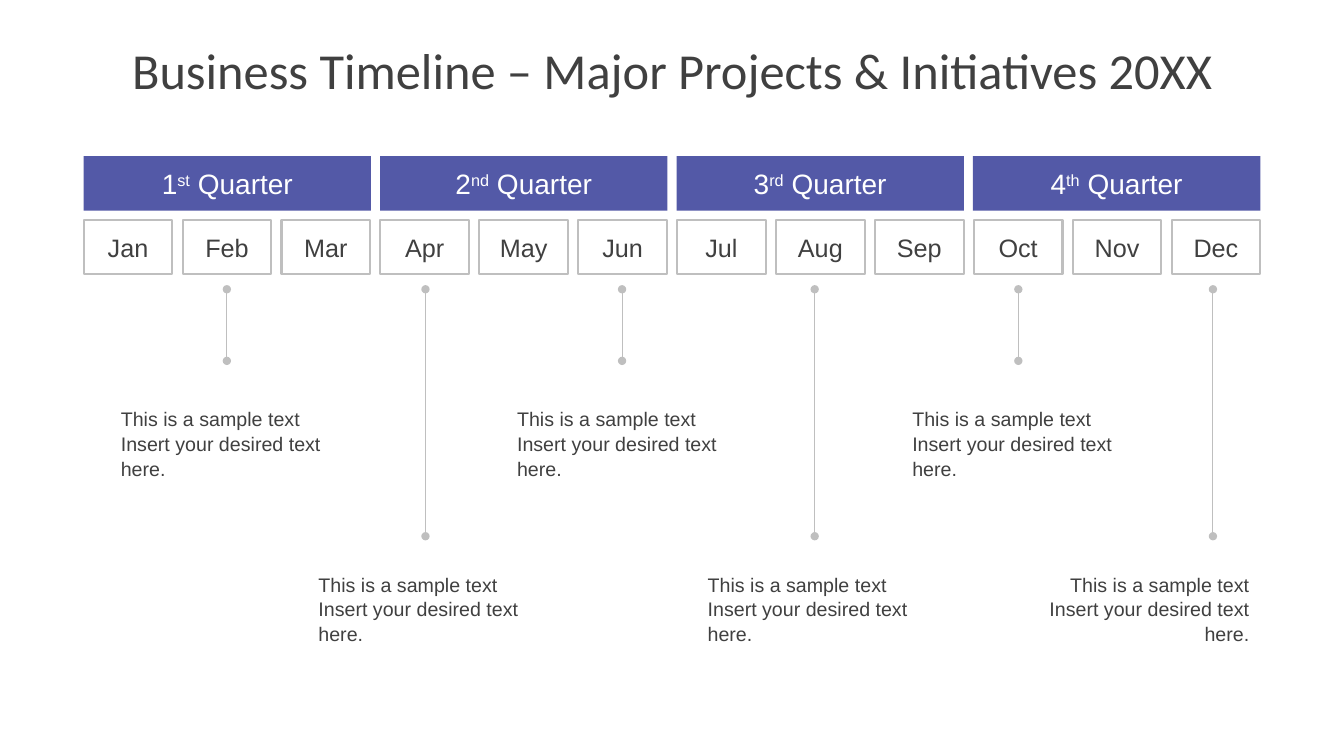
"""Build a one-slide business timeline with quarters, months and project notes."""
from lxml import etree
from pptx import Presentation
from pptx.dml.color import RGBColor
from pptx.enum.shapes import MSO_CONNECTOR, MSO_SHAPE
from pptx.enum.text import MSO_ANCHOR, MSO_AUTO_SIZE, PP_ALIGN
from pptx.oxml.ns import qn
from pptx.util import Inches, Pt

RECT = MSO_SHAPE.RECTANGLE
LINE = MSO_CONNECTOR.STRAIGHT
MIDDLE = MSO_ANCHOR.MIDDLE
GROW = MSO_AUTO_SIZE.SHAPE_TO_FIT_TEXT
LEFT, CENTER, RIGHT = PP_ALIGN.LEFT, PP_ALIGN.CENTER, PP_ALIGN.RIGHT

THEME = {
    "ink": RGBColor(0x40, 0x40, 0x40),
    "white": RGBColor(0xFF, 0xFF, 0xFF),
    "bar": RGBColor(0x53, 0x59, 0xA7),
    "rule": RGBColor(0xBF, 0xBF, 0xBF),
    "title": 36, "quarter": 20, "month": 18, "note": 14,
    "head": "Calibri", "body": "Arial",
}


def add_run(para, text, size, color="ink", font="body"):
    run = para.add_run()
    run.text = text
    run.font.size = Pt(THEME[size])
    run.font.name = THEME[font]
    run.font.color.rgb = THEME[color]
    return run


def add_box(left, top, width):
    box = slide.shapes.add_shape(
        RECT, Inches(left), Inches(top), Inches(width), Inches(0.54))
    box.shadow.inherit = False
    box.text_frame.vertical_anchor = MIDDLE
    box.text_frame.paragraphs[0].alignment = CENTER
    return box


deck = Presentation()
deck.slide_width, deck.slide_height = Inches(13.33), Inches(7.5)
slide = deck.slides.add_slide(deck.slide_layouts[5])

title = slide.shapes.title
title.left, title.top = Inches(0.67), Inches(0.3)
title.width, title.height = Inches(12), Inches(0.78)
frame = title.text_frame
frame.vertical_anchor = MIDDLE
frame.margin_left = frame.margin_right = 0
frame.margin_top = frame.margin_bottom = Inches(0.07)
frame.paragraphs[0].alignment = CENTER
add_run(frame.paragraphs[0], "Business Timeline – Major Projects & Initiatives 20XX",
        "title", font="head")

START, END = 0.83, 12.5
for i, suffix in enumerate(["st", "nd", "rd", "th"]):
    bar = add_box(START + i * 2.94, 1.55, 2.85)
    bar.fill.solid()
    bar.fill.fore_color.rgb = THEME["bar"]
    bar.line.fill.background()
    para = bar.text_frame.paragraphs[0]
    add_run(para, str(i + 1), "quarter", "white")
    mark = add_run(para, suffix, "quarter", "white")
    mark.font._element.set("baseline", "30000")
    add_run(para, " Quarter", "quarter", "white")

months = "Jan Feb Mar Apr May Jun Jul Aug Sep Oct Nov Dec".split()
WIDTH = 0.88
step = (END - START - WIDTH) / (len(months) - 1)
for i, month in enumerate(months):
    cell = add_box(START + i * step, 2.18, WIDTH)
    cell.fill.background()
    cell.line.color.rgb = THEME["rule"]
    cell.line.width = Pt(1.5)
    para = cell.text_frame.paragraphs[0]
    add_run(para, month, "month")

SHORT = (3.58, 3.98, 2.28)
LONG = (5.32, 5.62, 2.31)
notes = [
    (2.25, 1.1, SHORT, LEFT), (4.22, 3.06, LONG, LEFT),
    (6.17, 5.03, SHORT, LEFT), (8.08, 6.92, LONG, LEFT),
    (10.1, 8.95, SHORT, LEFT), (12.03, 10.18, LONG, RIGHT),
]
for x, left, (end, top, width), align in notes:
    stem = slide.shapes.add_connector(
        LINE, Inches(x), Inches(2.87), Inches(x), Inches(end))
    stem.line.color.rgb = THEME["rule"]
    stem.line.width = Pt(0.75)
    pen = stem.line._get_or_add_ln()
    for tip in ("a:headEnd", "a:tailEnd"):
        etree.SubElement(pen, qn(tip), type="oval")
    etree.SubElement(stem._element.spPr, qn("a:effectLst"))

    note = slide.shapes.add_textbox(
        Inches(left), Inches(top), Inches(width), Inches(0.81))
    note.text_frame.word_wrap = True
    note.text_frame.auto_size = GROW
    para = note.text_frame.paragraphs[0]
    para.alignment = align
    para.line_spacing = 1.05
    add_run(para, "This is a sample text Insert your desired text here.", "note")

deck.save("out.pptx")
